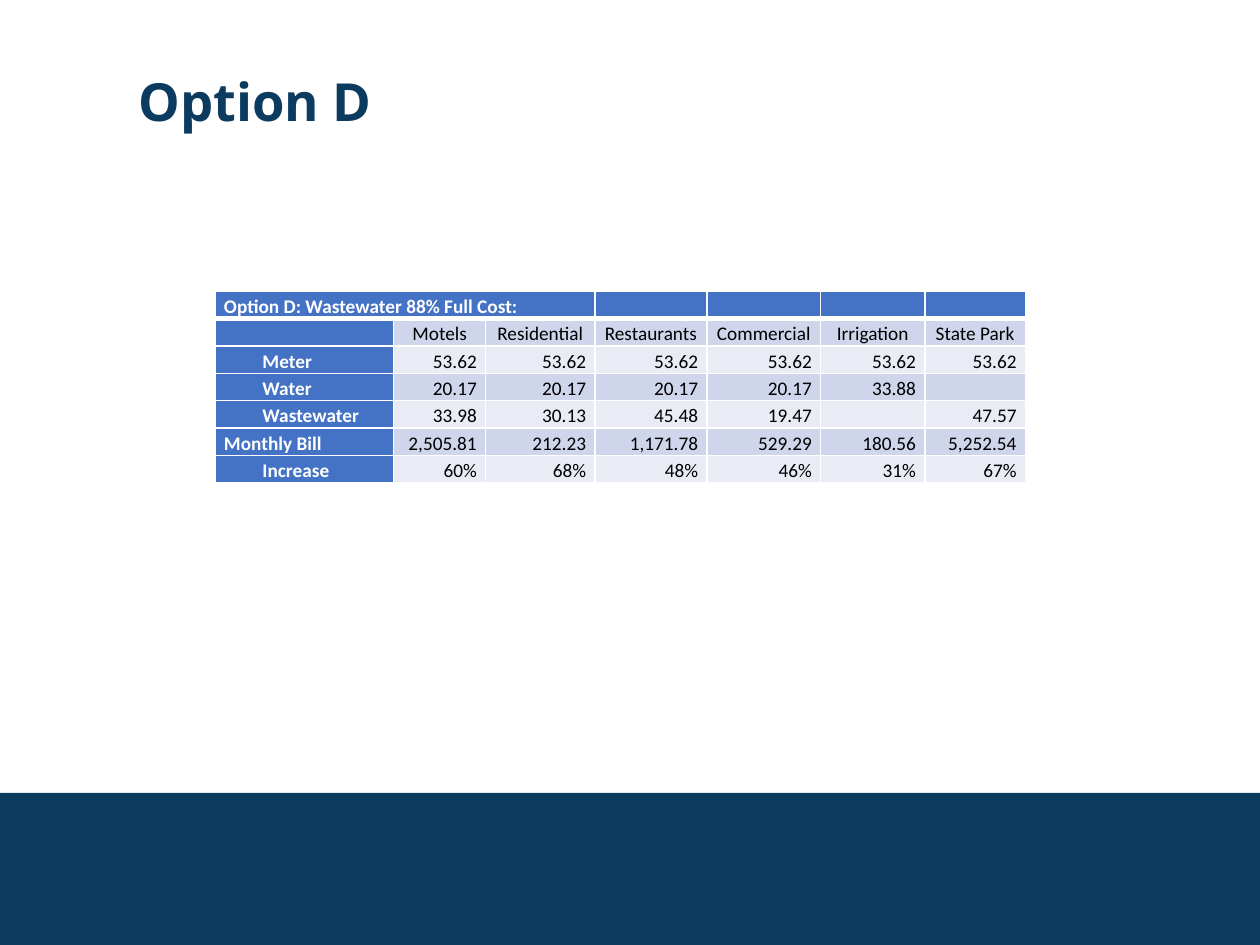
from lxml import etree
from pptx import Presentation
from pptx.dml.color import RGBColor
from pptx.enum import shapes, text
from pptx.oxml.ns import qn
from pptx.util import Pt

NAVY = RGBColor(0x0B, 0x3B, 0x5E)
BLUE = RGBColor(0x44, 0x72, 0xC4)
BANDS = (RGBColor(0xE9, 0xEB, 0xF5), RGBColor(0xCF, 0xD5, 0xEA))
WHITE = RGBColor(0xFF, 0xFF, 0xFF)
BLACK = RGBColor(0, 0, 0)

TITLE = "Option D"
ROWS = [
    ["Option D: Wastewater 88% Full Cost:", "", "", "", "", "", ""],
    ["", "Motels", "Residential", "Restaurants", "Commercial", "Irrigation", "State Park"],
    ["Meter", "53.62", "53.62", "53.62", "53.62", "53.62", "53.62"],
    ["Water", "20.17", "20.17", "20.17", "20.17", "33.88", ""],
    ["Wastewater", "33.98", "30.13", "45.48", "19.47", "", "47.57"],
    ["Monthly Bill", "2,505.81", "212.23", "1,171.78", "529.29", "180.56", "5,252.54"],
    ["Increase", "60%", "68%", "48%", "46%", "31%", "67%"],
]
INDENTED = {"Meter", "Water", "Wastewater", "Increase"}
WIDTHS = [102, 52.5, 62.5, 64, 65, 59.5, 57.5]
ROW_HEIGHT = 15.12
LEFT, TOP = 123, 166.5


def write(frame, words, size, color, font="Calibri", bold=False,
          align=text.PP_ALIGN.LEFT, spacing=None, after=None, indent=0):
    para = frame.paragraphs[0]
    para.alignment = align
    if spacing:
        para.line_spacing = spacing
    if after is not None:
        para.space_after = Pt(after)
    if indent:
        para._p.get_or_add_pPr().set("marL", str(Pt(indent)))
    if not words:
        etree.SubElement(para._p, qn("a:endParaRPr"), sz=str(size * 100))
        return
    span = para.add_run()
    span.text = words
    span.font.size = Pt(size)
    span.font.name = font
    span.font.bold = bold
    span.font.color.rgb = color


def set_borders(cell, widths):
    properties = cell._tc.get_or_add_tcPr()
    for side, width in widths.items():
        line = etree.SubElement(properties, qn(f"a:ln{side}"), w=str(Pt(width)))
        fill = etree.SubElement(line, qn("a:solidFill"))
        etree.SubElement(fill, qn("a:srgbClr"), val=str(WHITE))


def format_cell(cell, words, row, column):
    heading = row == 0 or column == 0
    set_borders(cell, {"L": 1, "R": 1, "T": 3 if row == 1 else 1, "B": 3 if row == 0 else 1})
    cell.fill.solid()
    cell.fill.fore_color.rgb = BLUE if heading else BANDS[row % 2]
    cell.margin_left = cell.margin_right = Pt(5)
    cell.margin_top = cell.margin_bottom = 0
    cell.vertical_anchor = text.MSO_ANCHOR.BOTTOM
    if heading:
        align = text.PP_ALIGN.LEFT
    else:
        align = text.PP_ALIGN.CENTER if row == 1 else text.PP_ALIGN.RIGHT
    write(cell.text_frame, words, 11, WHITE if heading else BLACK, bold=heading,
          align=align, spacing=1.15, after=8, indent=22 if words in INDENTED else 0)


def main():
    deck = Presentation()
    deck.slide_width, deck.slide_height = Pt(720), Pt(540)
    page = deck.slides.add_slide(deck.slide_layouts[5])

    band = page.shapes.add_shape(shapes.MSO_SHAPE.RECTANGLE, 0, Pt(453), Pt(720), Pt(87))
    band.shadow.inherit = False
    band.fill.solid()
    band.fill.fore_color.rgb = NAVY
    band.line.fill.background()

    title = page.shapes.title
    title.left, title.top, title.width, title.height = Pt(72), Pt(36), Pt(648 - 72), Pt(72.5)
    title.text_frame.vertical_anchor = text.MSO_ANCHOR.TOP
    title.text_frame.word_wrap = True
    write(title.text_frame, TITLE, 30, NAVY, font="Open Sans", bold=True)

    table = page.shapes.add_table(len(ROWS), len(WIDTHS), Pt(LEFT), Pt(TOP),
                                  Pt(sum(WIDTHS)), Pt(ROW_HEIGHT * len(ROWS))).table
    table.first_col = True
    for column, width in zip(table.columns, WIDTHS):
        column.width = Pt(width)
    for row, values in enumerate(ROWS):
        table.rows[row].height = Pt(ROW_HEIGHT)
        for column, words in enumerate(values):
            format_cell(table.cell(row, column), words, row, column)
    table.cell(0, 0).merge(table.cell(0, 2))

    deck.save("out.pptx")


if __name__ == "__main__":
    main()
